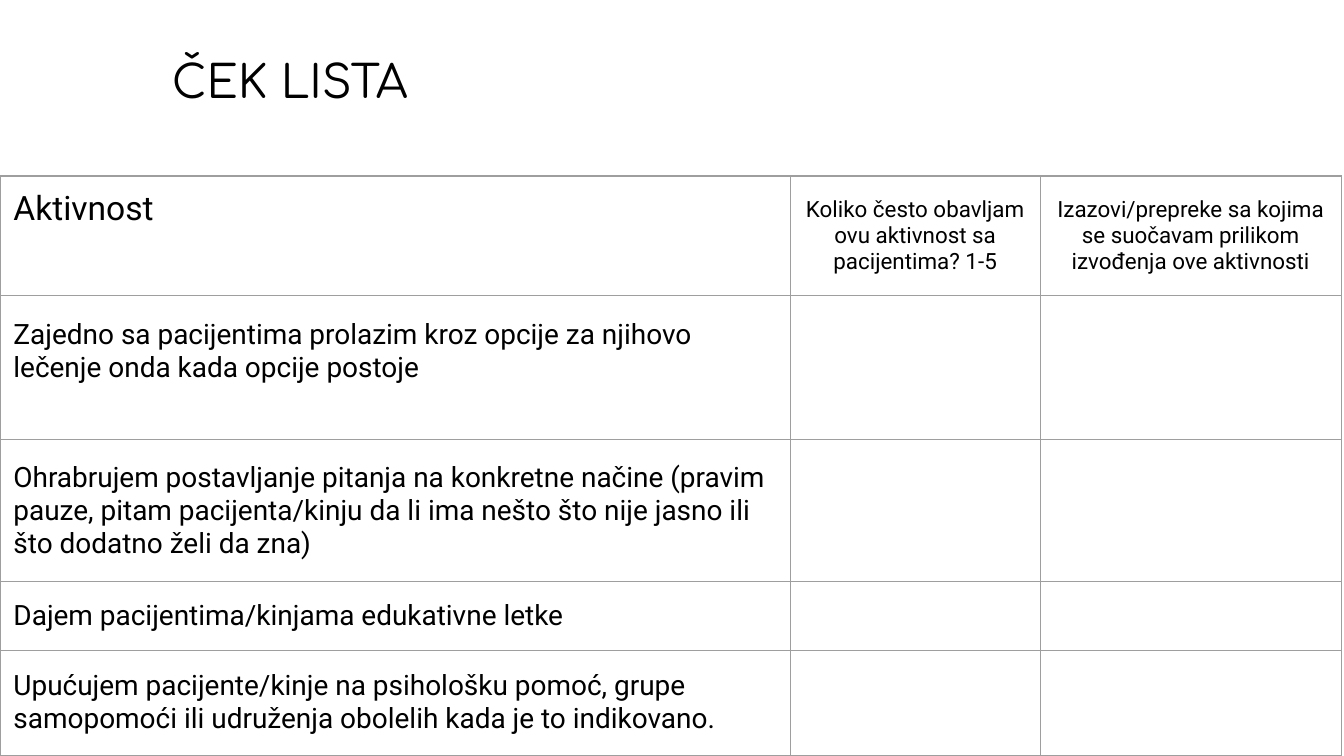
import pptx
import pptx.util
import pptx.dml.color
import pptx.enum.text
import pptx.oxml
import pptx.oxml.ns

Inches = pptx.util.Inches
Pt = pptx.util.Pt
ALIGN = pptx.enum.text.PP_ALIGN
ANCHOR = pptx.enum.text.MSO_ANCHOR

COLORS = {"ink": "000000", "paper": "FFFFFF", "rule": "9E9E9E"}
WIDTH = 10
COLS = [5.88, 1.86, 2.24]
ROWS = [0.89, 1.07, 1.06, 0.51, 0.78]
HEADS = [
    "Aktivnost",
    "Koliko često obavljam ovu aktivnost sa pacijentima? 1-5",
    "Izazovi/prepreke sa kojima se suočavam prilikom izvođenja ove aktivnosti",
]
TASKS = [
    "Zajedno sa pacijentima prolazim kroz opcije za njihovo lečenje onda kada opcije postoje",
    "Ohrabrujem postavljanje pitanja na konkretne načine (pravim pauze, pitam pacijenta/kinju "
    "da li ima nešto što nije jasno ili što dodatno želi da zna)",
    "Dajem pacijentima/kinjama edukativne letke",
    "Upućujem pacijente/kinje na psihološku pomoć, grupe samopomoći ili udruženja obolelih "
    "kada je to indikovano.",
]
TITLE = {"size": Pt(24.2), "name": "Comfortaa"}
LEAD = {"size": Pt(18), "name": "Roboto"}
HEAD = {"size": Pt(12), "name": "Roboto"}
BODY = {"size": Pt(15), "name": "Roboto"}
PAD = {f"margin_{side}": Inches(0.1) for side in ("left", "right", "top", "bottom")}


def color(key):
    return pptx.dml.color.RGBColor.from_string(COLORS[key])


def apply(item, values):
    for key, value in values.items():
        setattr(item, key, value)


def write(frame, text, style, align=ALIGN.LEFT):
    line = frame.paragraphs[0]
    line.alignment = align
    run = line.add_run()
    run.text = text
    apply(run.font, style)
    run.font.color.rgb = color("ink")


def add_title(slide, text):
    box = slide.shapes.add_textbox(Inches(1.18), Inches(0.3), Inches(8.48), Inches(0.74))
    apply(box.text_frame, {**PAD, "word_wrap": True})
    write(box.text_frame, text, TITLE)


def add_rules(cell):
    props = cell._tc.get_or_add_tcPr()
    space = pptx.oxml.ns.nsdecls("a")
    for index, side in enumerate(("lnL", "lnR", "lnT", "lnB")):
        props.insert(index, pptx.oxml.parse_xml(
            f'<a:{side} {space} w="{Pt(0.75)}"><a:solidFill>'
            f'<a:srgbClr val="{COLORS["rule"]}"/></a:solidFill></a:{side}>'))


def add_grid(slide):
    frame = slide.shapes.add_table(
        len(ROWS), len(COLS), 0, Inches(1.31), Inches(sum(COLS)), Inches(sum(ROWS)))
    table = frame.table
    apply(table, {"first_row": False, "horz_banding": False})
    for col, width in zip(table.columns, COLS):
        col.width = Inches(width)
    for row, height in zip(table.rows, ROWS):
        row.height = Inches(height)
    for cell in table.iter_cells():
        apply(cell, {**PAD, "vertical_anchor": ANCHOR.MIDDLE})
        cell.fill.solid()
        cell.fill.fore_color.rgb = color("paper")
        add_rules(cell)
    return table


def fill_grid(table):
    lead = table.cell(0, 0)
    lead.vertical_anchor = ANCHOR.TOP
    write(lead.text_frame, HEADS[0], LEAD)
    for col, text in enumerate(HEADS[1:], 1):
        write(table.cell(0, col).text_frame, text, HEAD, ALIGN.CENTER)
    for row, text in enumerate(TASKS, 1):
        write(table.cell(row, 0).text_frame, text, BODY)
    table.cell(1, 0).margin_bottom = Inches(0.34)


def main():
    deck = pptx.Presentation()
    apply(deck, {"slide_width": Inches(WIDTH), "slide_height": Inches(WIDTH * 9 / 16)})
    slide = deck.slides.add_slide(deck.slide_layouts[6])
    add_title(slide, "ČEK LISTA")
    fill_grid(add_grid(slide))
    deck.save("out.pptx")


if __name__ == "__main__":
    main()
